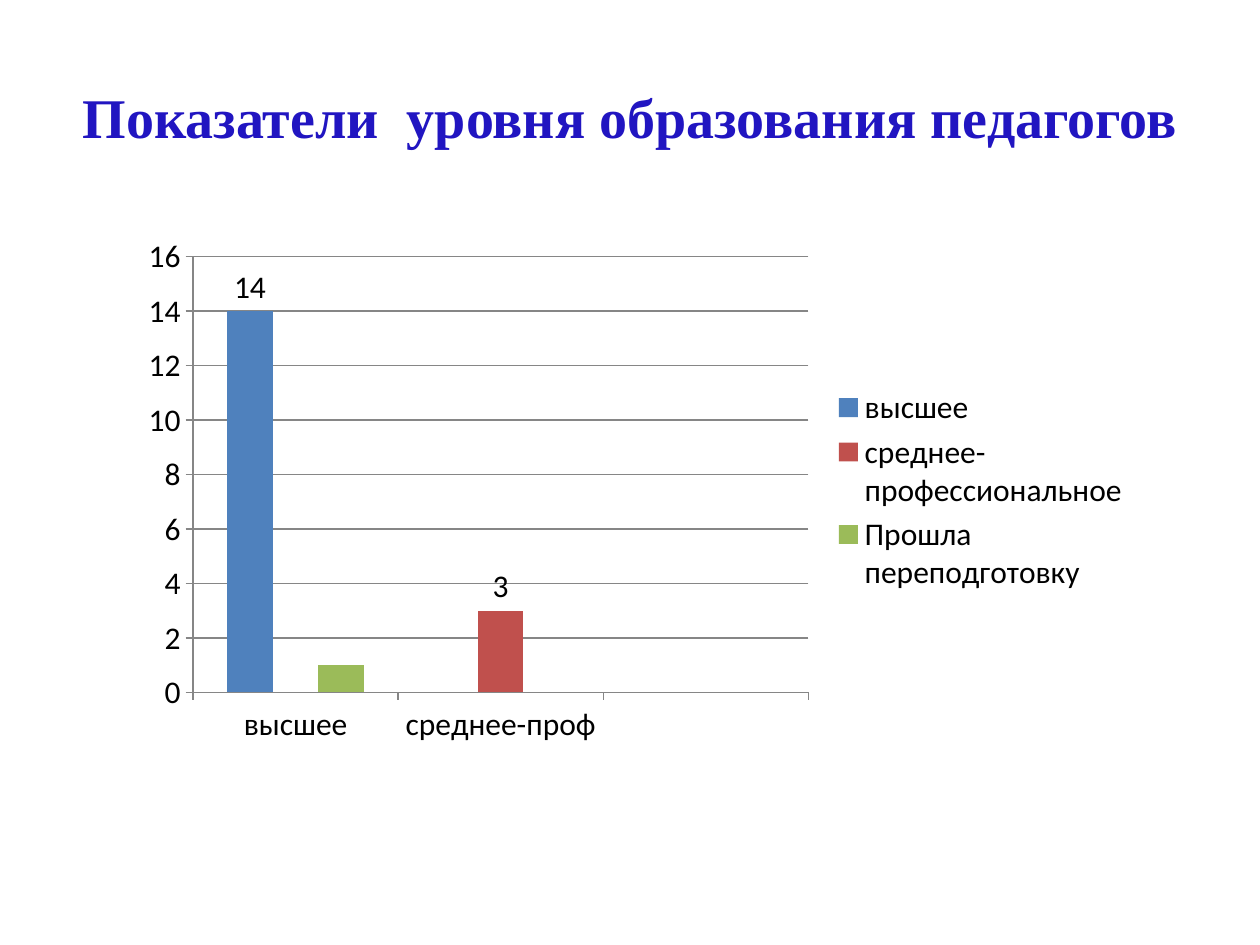
from dataclasses import dataclass

from pptx import Presentation
from pptx.chart.chart import Chart
from pptx.chart.data import CategoryChartData as Data
from pptx.dml.color import RGBColor as Color
from pptx.enum.chart import XL_CHART_TYPE as Kind
from pptx.enum.chart import XL_LABEL_POSITION as Spot
from pptx.enum.chart import XL_LEGEND_POSITION as Side
from pptx.enum.chart import XL_TICK_MARK as Tick
from pptx.enum.text import MSO_ANCHOR as Anchor
from pptx.enum.text import PP_ALIGN as Align
from pptx.util import Pt


@dataclass(frozen=True)
class Theme:
    head: str = "Times New Roman"
    body: str = "Calibri"
    large: int = 32
    small: int = 18
    blue: str = "2115C1"
    ink: str = "000000"
    grid: str = "868686"


@dataclass(frozen=True)
class Box:
    left: float
    top: float
    width: float
    height: float

    def points(self) -> tuple:
        return Pt(self.left), Pt(self.top), Pt(self.width), Pt(self.height)


@dataclass(frozen=True)
class Level:
    name: str
    counts: tuple
    color: str
    labeled: bool = False


THEME = Theme()
GROUPS = ("высшее", "среднее-проф", "")
LEVELS = (
    Level("высшее", (14, None, None), "4F81BD", True),
    Level("среднее-профессиональное", (None, 3, None), "C0504D", True),
    Level("Прошла переподготовку", (1, None, None), "9BBB59"),
)


def set_font(font, name: str, size: int, color: str, bold: bool = False) -> None:
    font.name = name
    font.size = Pt(size)
    font.bold = bold
    font.color.rgb = Color.from_string(color)


def set_line(line) -> None:
    line.color.rgb = Color.from_string(THEME.grid)
    line.width = Pt(0.75)


def draw_title(slide, text: str, box: Box) -> None:
    title = slide.shapes.title
    title.left, title.top, title.width, title.height = box.points()
    frame = title.text_frame
    frame.text = text
    frame.word_wrap = True
    frame.vertical_anchor = Anchor.MIDDLE
    para = frame.paragraphs[0]
    para.alignment = Align.CENTER
    set_font(para.runs[0].font, THEME.head, THEME.large, THEME.blue, True)


def style_bars(chart: Chart) -> None:
    plot = chart.plots[0]
    plot.gap_width = 150
    plot.overlap = 0
    plot.vary_by_categories = False
    for bars, level in zip(plot.series, LEVELS):
        bars.invert_if_negative = False
        bars.format.fill.solid()
        bars.format.fill.fore_color.rgb = Color.from_string(level.color)
        if level.labeled:
            labels = bars.data_labels
            labels.show_value = True
            labels.position = Spot.OUTSIDE_END
            set_font(labels.font, THEME.body, THEME.small, THEME.ink)


def style_axes(chart: Chart) -> None:
    for axis in (chart.category_axis, chart.value_axis):
        axis.major_tick_mark = Tick.OUTSIDE
        axis.minor_tick_mark = Tick.NONE
        set_line(axis.format.line)
    scale = chart.value_axis
    scale.minimum_scale = 0
    scale.maximum_scale = 16
    scale.major_unit = 2
    scale.has_major_gridlines = True
    set_line(scale.major_gridlines.format.line)


def draw_chart(slide, box: Box) -> None:
    data = Data()
    data.categories = GROUPS
    for level in LEVELS:
        data.add_series(level.name, level.counts)
    chart = slide.shapes.add_chart(
        Kind.COLUMN_CLUSTERED, *box.points(), data
    ).chart
    chart.has_title = False
    set_font(chart.font, THEME.body, THEME.small, THEME.ink)
    chart.has_legend = True
    chart.legend.position = Side.RIGHT
    chart.legend.include_in_layout = False
    style_bars(chart)
    style_axes(chart)


def main() -> None:
    deck = Presentation()
    deck.slide_width, deck.slide_height = Pt(720), Pt(540)
    slide = deck.slides.add_slide(deck.slide_layouts[5])
    draw_title(
        slide,
        "Показатели  уровня образования педагогов",
        Box(36, 21.6, 648, 90),
    )
    draw_chart(slide, Box(73.4, 129.6, 579.6, 301))
    deck.save("out.pptx")


if __name__ == "__main__":
    main()
